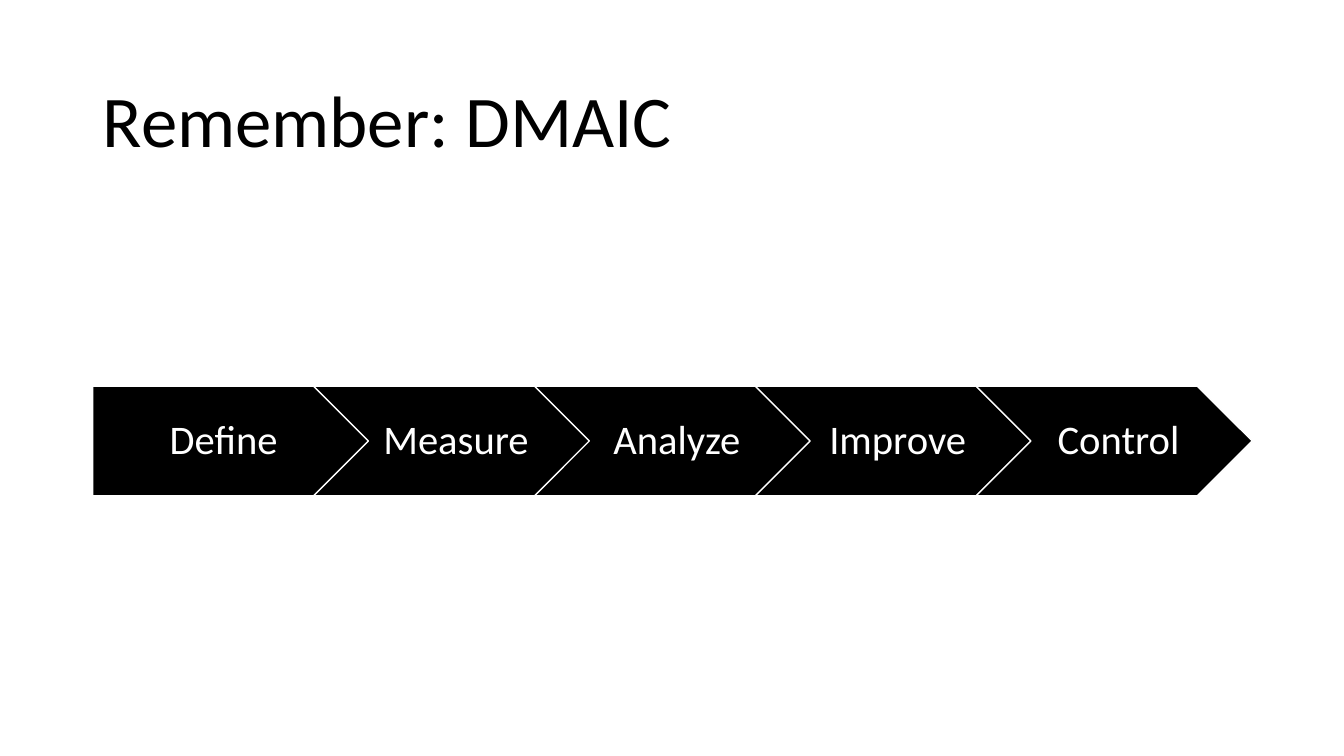
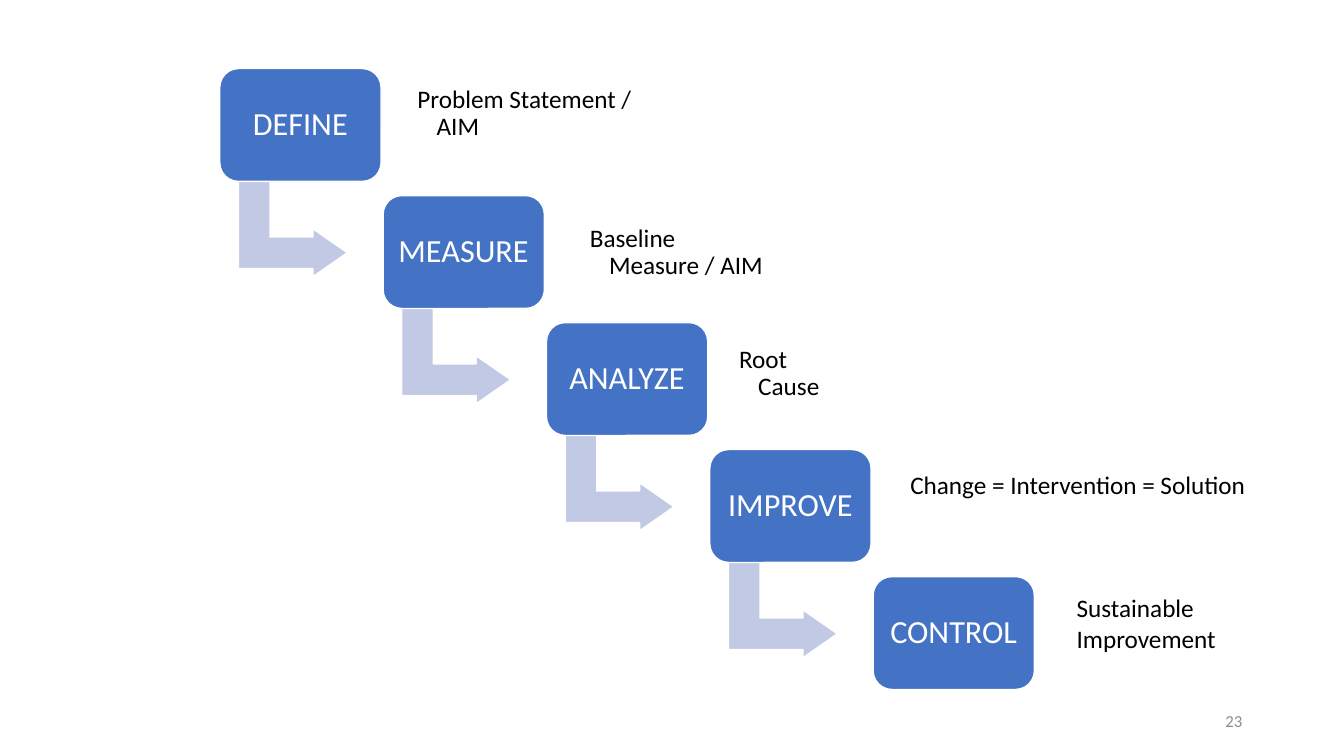
from dataclasses import dataclass

from pptx import Presentation
from pptx.dml.color import RGBColor
from pptx.enum.shapes import MSO_SHAPE
from pptx.enum.text import MSO_ANCHOR, MSO_AUTO_SIZE, PP_ALIGN
from pptx.oxml import parse_xml
from pptx.util import Inches, Pt


@dataclass(frozen=True)
class Theme:
    font: str = "Calibri"
    black: str = "000000"
    white: str = "FFFFFF"
    blue: str = "4472C4"
    pale: str = "C1C9E4"
    grey: str = "8C8C8C"
    title: int = 52
    chain: int = 29
    stair: int = 23
    note: int = 18
    page: int = 12
    tight: float = 0.9


theme = Theme()


def write(shape, text, size, color, align, insets, spacing=theme.tight,
          anchor=MSO_ANCHOR.MIDDLE, wrap=True):
    """Fill a shape with styled text; insets run left, top, right, bottom."""
    frame = shape.text_frame
    frame.text = text
    frame.word_wrap = wrap
    frame.auto_size = MSO_AUTO_SIZE.NONE
    frame.vertical_anchor = anchor
    (frame.margin_left, frame.margin_top,
     frame.margin_right, frame.margin_bottom) = map(Inches, insets)
    for para in frame.paragraphs:
        para.alignment = align
        para.line_spacing = spacing
        for run in para.runs:
            run.font.name = theme.font
            run.font.size = Pt(size)
            run.font.color.rgb = RGBColor.from_string(color)


def draw(slide, kind, box, fill):
    """Add a flat preset shape with a thin white outline."""
    shape = slide.shapes.add_shape(kind, *map(Inches, box))
    shape.shadow.inherit = False
    shape.fill.solid()
    shape.fill.fore_color.rgb = RGBColor.from_string(fill)
    shape.line.color.rgb = RGBColor.from_string(theme.white)
    shape.line.width = Pt(1)
    return shape


deck = Presentation()
deck.slide_width, deck.slide_height = Inches(13.33), Inches(7.5)
deck.element.set("firstSlideNum", "22")
plain = (0.1, 0.05, 0.1, 0.05)
steps = ["Define", "Measure", "Analyze", "Improve", "Control"]

# Slide 1: chain of steps
slide = deck.slides.add_slide(deck.slide_layouts[5])
title = slide.shapes.title
title.left, title.top = Inches(0.92), Inches(0.61)
title.width, title.height = Inches(11.5), Inches(1.24)
write(title, "Remember: DMAIC", theme.title, theme.black, PP_ALIGN.LEFT, plain)

for i, step in enumerate(steps):
    kind = MSO_SHAPE.CHEVRON if i else MSO_SHAPE.PENTAGON
    link = draw(slide, kind, (0.92 + 2.19 * i, 3.83, 2.74, 1.09), theme.black)
    left = 0.13 if i else 0.17
    write(link, step, theme.chain, theme.white, PP_ALIGN.CENTER,
          (left, 0.08, 0.04, 0.08), wrap=False)

# Slide 2: staircase of steps, each with its result
slide = deck.slides.add_slide(deck.slide_layouts[6])
for i, step in enumerate(steps):
    left, top = 2.18 + 1.62 * i, 0.68 + 1.26 * i
    if i < len(steps) - 1:
        arrow = draw(slide, MSO_SHAPE.BENT_UP_ARROW,
                     (left + 0.25, top + 1.05, 0.95, 1.08), theme.pale)
        arrow.rotation = 90
        for j, value in enumerate((0.33, 0.25, 0.36)):
            arrow.adjustments[j] = value
    block = draw(slide, MSO_SHAPE.ROUNDED_RECTANGLE,
                 (left, top, 1.6, 1.12), theme.blue)
    write(block, step.upper(), theme.stair, theme.white, PP_ALIGN.CENTER,
          (0.1,) * 4, wrap=False)

hanging = [
    ("Problem Statement / AIM", (4.07, 0.68, 2.39, 0.9)),
    ("Baseline Measure / AIM", (5.78, 2.06, 2.05, 0.9)),
    ("Root Cause", (7.26, 3.26, 1.16, 0.9)),
]
for text, box in hanging:
    note = slide.shapes.add_textbox(*map(Inches, box))
    write(note, text, theme.note, theme.black, PP_ALIGN.LEFT, (0.07,) * 4)
    props = note.text_frame.paragraphs[0]._p.get_or_add_pPr()
    props.set("marL", str(Inches(0.19)))
    props.set("indent", str(-Inches(0.19)))

loose = [
    ("Change = Intervention = Solution", (8.93, 4.61, 3.57, 0.4)),
    ("Sustainable\nImprovement", (10.58, 5.83, 1.6, 0.71)),
]
for text, box in loose:
    note = slide.shapes.add_textbox(*map(Inches, box))
    write(note, text, theme.note, theme.black, PP_ALIGN.LEFT, plain,
          spacing=1.0, anchor=MSO_ANCHOR.TOP, wrap=False)

page = slide.shapes.add_textbox(*map(Inches, (9.42, 6.95, 3, 0.4)))
write(page, "", theme.page, theme.grey, PP_ALIGN.RIGHT, plain, spacing=1.0)
page.text_frame.paragraphs[0]._p.append(parse_xml(
    '<a:fld xmlns:a="http://schemas.openxmlformats.org/drawingml/2006/main"'
    ' id="{B6F15528-21DE-4FAA-801E-634DDDAF4B2B}" type="slidenum">'
    f'<a:rPr lang="en-US" sz="{theme.page * 100}"><a:solidFill>'
    f'<a:srgbClr val="{theme.grey}"/></a:solidFill>'
    f'<a:latin typeface="{theme.font}"/></a:rPr><a:t>23</a:t></a:fld>'))

deck.save("out.pptx")
